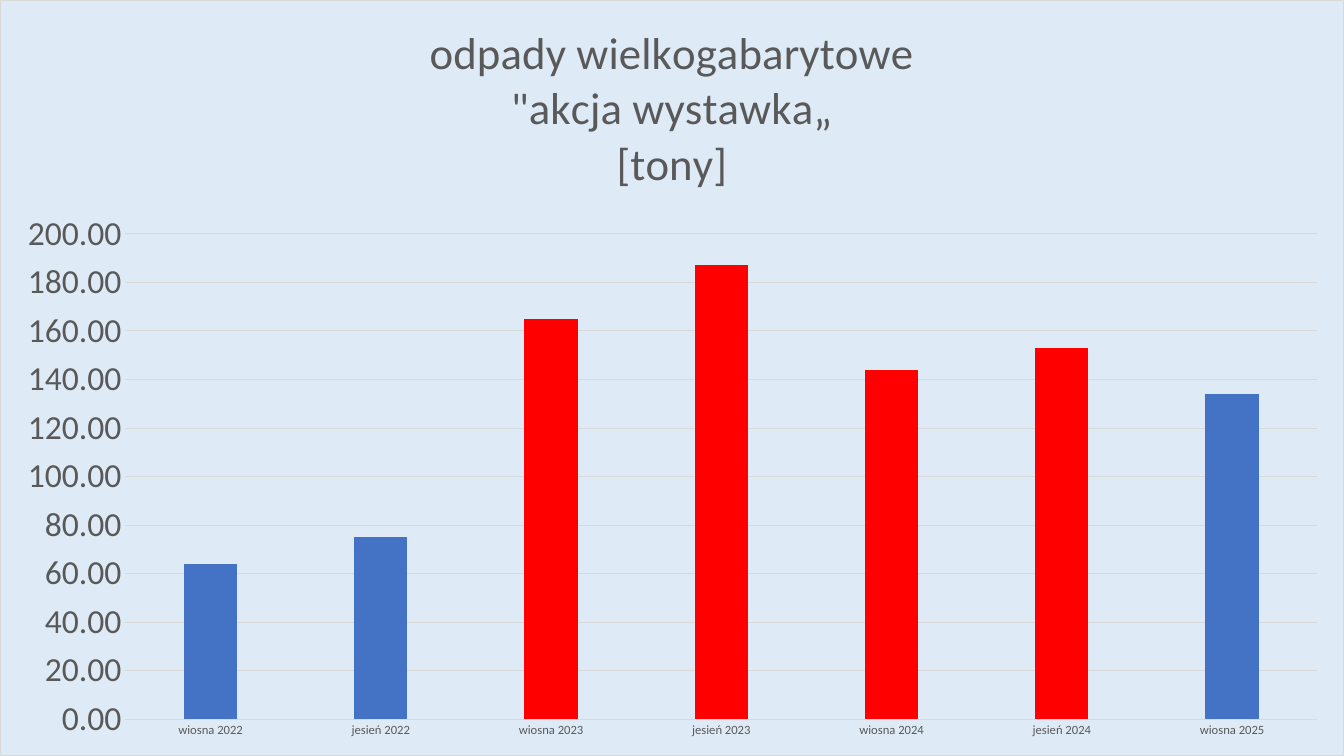
import pptx
import pptx.chart.data
import pptx.dml.color
import pptx.enum.chart
import pptx.oxml
import pptx.oxml.ns
import pptx.util
from pptx.util import Inches, Pt

RGBColor = pptx.dml.color.RGBColor
PALE_BLUE = RGBColor(0xDE, 0xEB, 0xF7)
GRID_GREY = RGBColor(0xD9, 0xD9, 0xD9)
TEXT_GREY = RGBColor(0x59, 0x59, 0x59)
BLUE = RGBColor(0x44, 0x72, 0xC4)
RED = RGBColor(0xFF, 0x00, 0x00)

TITLE_LINES = ["odpady wielkogabarytowe", '"akcja wystawka„', "[tony]"]
TONNES = {
    "wiosna 2022": 64,
    "jesień 2022": 75,
    "wiosna 2023": 165,
    "jesień 2023": 187,
    "wiosna 2024": 144,
    "jesień 2024": 153,
    "wiosna 2025": 134,
}
RED_YEARS = ("2023", "2024")


class WasteSlide:
    FONT = "Calibri"

    def __init__(self, presentation):
        self.width = presentation.slide_width
        self.height = presentation.slide_height
        self.slide = presentation.slides.add_slide(presentation.slide_layouts[6])

    def style_font(self, font, size):
        font.name = self.FONT
        font.size = Pt(size)
        font.bold = False
        font.color.rgb = TEXT_GREY

    def style_line(self, line):
        line.color.rgb = GRID_GREY
        line.width = Pt(0.75)

    def add_columns(self, name, tonnes):
        columns = pptx.chart.data.CategoryChartData(number_format="0.00")
        columns.categories = list(tonnes)
        columns.add_series(name, list(tonnes.values()))
        chart = self.slide.shapes.add_chart(
            pptx.enum.chart.XL_CHART_TYPE.COLUMN_CLUSTERED,
            Inches(0), Inches(0), self.width, self.height, columns).chart
        self.style_font(chart.font, 10)
        chart.has_legend = False

        plot = chart.plots[0]
        plot.gap_width = 219
        plot.overlap = -27
        plot.vary_by_categories = False
        series = plot.series[0]
        series.format.fill.solid()
        series.format.fill.fore_color.rgb = BLUE
        for index, season in enumerate(tonnes):
            if season.endswith(RED_YEARS):
                fill = series.points[index].format.fill
                fill.solid()
                fill.fore_color.rgb = RED
        return chart

    def add_title(self, chart, lines):
        chart.has_title = True
        chart.chart_title.include_in_layout = False
        frame = chart.chart_title.text_frame
        frame.text = "\n".join(lines)
        for paragraph in frame.paragraphs:
            self.style_font(paragraph.font, 32)

    def style_axes(self, chart):
        seasons, tonnage = chart.category_axis, chart.value_axis
        for axis, size in ((seasons, 9), (tonnage, 24)):
            axis.major_tick_mark = pptx.enum.chart.XL_TICK_MARK.NONE
            axis.minor_tick_mark = pptx.enum.chart.XL_TICK_MARK.NONE
            self.style_font(axis.tick_labels.font, size)
        self.style_line(seasons.format.line)
        tonnage.format.line.fill.background()
        tonnage.minimum_scale = 0
        tonnage.maximum_scale = 200
        tonnage.major_unit = 20
        tonnage.has_major_gridlines = True
        self.style_line(tonnage.major_gridlines.format.line)
        tonnage.tick_labels.number_format = "0.00"
        tonnage.tick_labels.number_format_is_linked = False

    def fill_background(self, chart):
        namespaces = pptx.oxml.ns.nsdecls("c", "a")
        chart.element.find(pptx.oxml.ns.qn("c:chart")).addnext(pptx.oxml.parse_xml(
            f'<c:spPr {namespaces}>'
            f'<a:solidFill><a:srgbClr val="{PALE_BLUE}"/></a:solidFill>'
            f'<a:ln w="{Pt(0.75)}"><a:solidFill><a:srgbClr val="{GRID_GREY}"/>'
            f'</a:solidFill></a:ln></c:spPr>'))

    def place_plot(self, chart, left, top, width, height):
        """Set the inner plot area in inches from the chart's corner."""
        fractions = {"x": Inches(left) / self.width, "y": Inches(top) / self.height,
                     "w": Inches(width) / self.width, "h": Inches(height) / self.height}
        values = "".join(f'<c:{key} val="{value:.4f}"/>' for key, value in fractions.items())
        plot_area = chart.element.find(".//" + pptx.oxml.ns.qn("c:plotArea"))
        for layout in plot_area.findall(pptx.oxml.ns.qn("c:layout")):
            plot_area.remove(layout)
        plot_area.insert(0, pptx.oxml.parse_xml(
            f'<c:layout {pptx.oxml.ns.nsdecls("c")}><c:manualLayout>'
            '<c:layoutTarget val="inner"/><c:xMode val="edge"/><c:yMode val="edge"/>'
            f'{values}</c:manualLayout></c:layout>'))


def main():
    presentation = pptx.Presentation()
    presentation.slide_width = Inches(13.33)
    presentation.slide_height = Inches(7.5)
    waste = WasteSlide(presentation)
    chart = waste.add_columns("Series 1", TONNES)
    waste.add_title(chart, TITLE_LINES)
    waste.style_axes(chart)
    waste.fill_background(chart)
    waste.place_plot(chart, 1.24, 2.32, 11.83, 4.82)
    presentation.save("out.pptx")


if __name__ == "__main__":
    main()
